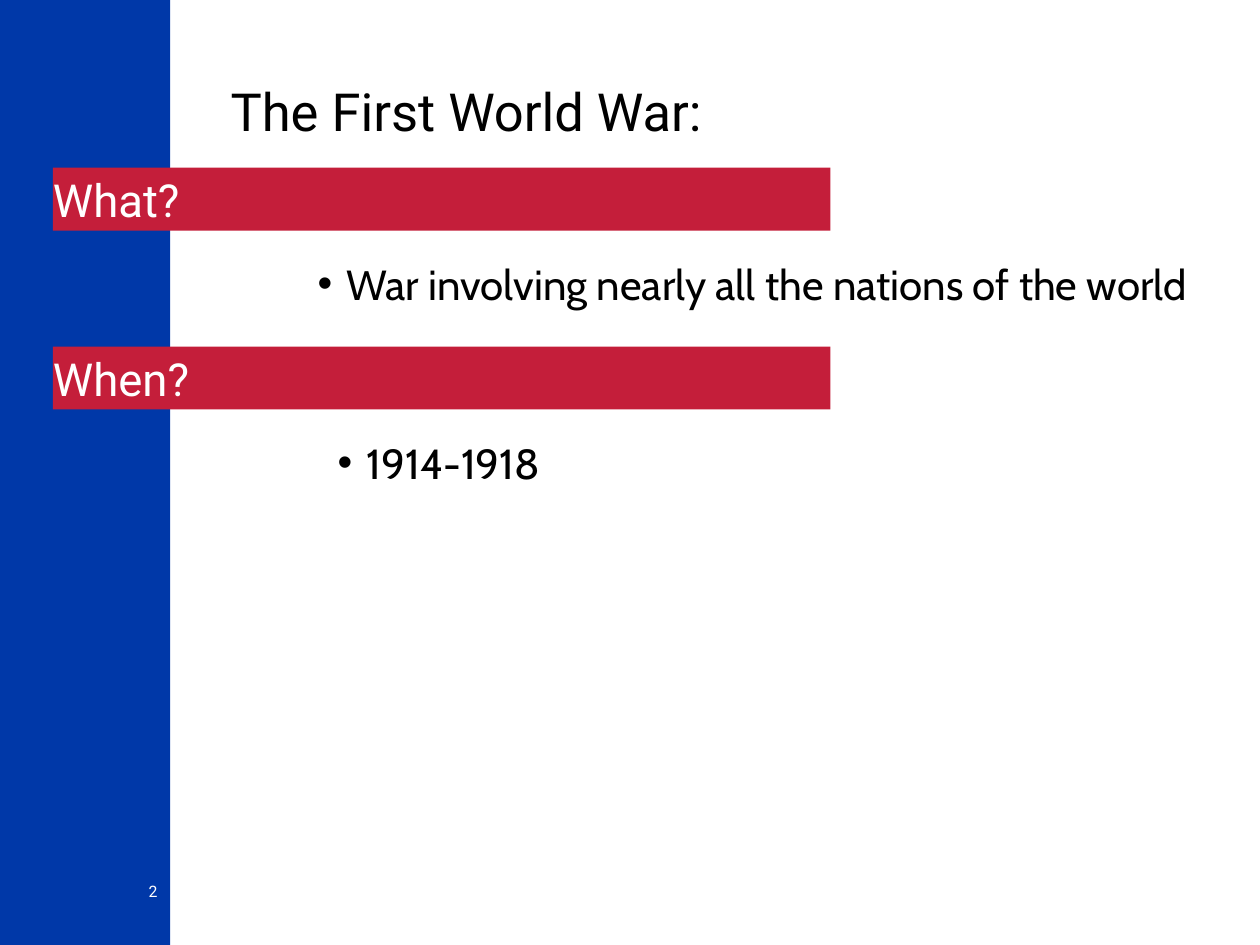
import dataclasses

import lxml.etree
import pptx
import pptx.dml.color
import pptx.enum.shapes
import pptx.enum.text
import pptx.oxml.ns
import pptx.util
from pptx.util import Inches

Align = pptx.enum.text.PP_ALIGN
Anchor = pptx.enum.text.MSO_ANCHOR


@dataclasses.dataclass(frozen=True)
class Theme:
    blue: str = "0038A8"
    red: str = "C41E3A"
    white: str = "FFFFFF"
    black: str = "000000"
    heading_font: str = "Roboto"
    body_font: str = "Cabin"
    title_size: int = 30
    heading_size: int = 26
    body_size: int = 24
    number_size: int = 9


THEME = Theme()


def fill_shape(shape, color):
    shape.fill.solid()
    shape.fill.fore_color.rgb = pptx.dml.color.RGBColor.from_string(color)
    shape.line.fill.background()


def place(shape, box):
    shape.left, shape.top, shape.width, shape.height = map(Inches, box)


def write_text(shape, text, font, size, color, align=Align.LEFT, anchor=Anchor.TOP, insets=(0, 0)):
    frame = shape.text_frame
    frame.word_wrap = True
    frame.auto_size = pptx.enum.text.MSO_AUTO_SIZE.NONE
    frame.vertical_anchor = anchor
    frame.margin_left = frame.margin_right = Inches(insets[0])
    frame.margin_top = frame.margin_bottom = Inches(insets[1])
    paragraph = frame.paragraphs[0]
    paragraph.alignment = align
    paragraph.space_before = pptx.util.Pt(0)
    run = paragraph.add_run()
    run.text = text
    run.font.name = font
    run.font.size = pptx.util.Pt(size)
    run.font.bold = False
    run.font.color.rgb = pptx.dml.color.RGBColor.from_string(color)
    return paragraph


def add_bullet(paragraph, indent):
    properties = paragraph._p.get_or_add_pPr()
    properties.set("marL", str(Inches(indent)))
    properties.set("indent", str(-Inches(indent)))
    bullet = lxml.etree.SubElement(properties, pptx.oxml.ns.qn("a:buChar"))
    bullet.set("char", "•")


def add_sidebar(slide, box):
    sidebar = slide.shapes.add_shape(pptx.enum.shapes.MSO_SHAPE.RECTANGLE, *map(Inches, box))
    sidebar.shadow.inherit = False
    fill_shape(sidebar, THEME.blue)
    slide.shapes.element.insert(2, sidebar.element)
    left, top, width, height = box
    number = slide.shapes.add_textbox(
        Inches(left + width - 0.77), Inches(top + height - 0.5), Inches(0.67), Inches(0.33))
    write_text(number, "2", THEME.heading_font, THEME.number_size, THEME.white, Align.RIGHT)


def add_title(slide, box, text):
    title = slide.shapes.title
    place(title, box)
    write_text(title, text, THEME.heading_font, THEME.title_size, THEME.black, anchor=Anchor.BOTTOM)


def add_section(heading, body, box, heading_text, body_text, body_left, body_width):
    left, top, width, height = box
    place(heading, (left, top, width, 0.5))
    fill_shape(heading, THEME.red)
    write_text(heading, heading_text, THEME.heading_font, THEME.heading_size, THEME.white,
               anchor=Anchor.MIDDLE)
    place(body, (body_left, top + height - 0.5, body_width, 0.5))
    paragraph = write_text(body, body_text, THEME.body_font, THEME.body_size, THEME.black,
                           insets=(0.1, 0.05))
    add_bullet(paragraph, 0.23)


def main():
    presentation = pptx.Presentation()
    presentation.slide_width, presentation.slide_height = Inches(10), Inches(7.5)
    slide = presentation.slides.add_slide(presentation.slide_layouts.get_by_name("Comparison"))
    add_sidebar(slide, (0, 0, 1.35, 7.5))
    add_title(slide, (1.83, 0.3, 7.42, 0.83), "The First World War:")
    sections = [
        ("What?", "War involving nearly all the nations of the world", 2.42, 7.58),
        ("When?", "1914-1918", 2.58, 6.92),
    ]
    for index, section in enumerate(sections):
        heading = slide.placeholders[1 + 2 * index]
        body = slide.placeholders[2 + 2 * index]
        add_section(heading, body, (0.42, 1.33 + 1.42 * index, 6.17, 1.17), *section)
    presentation.save("out.pptx")


if __name__ == "__main__":
    main()
